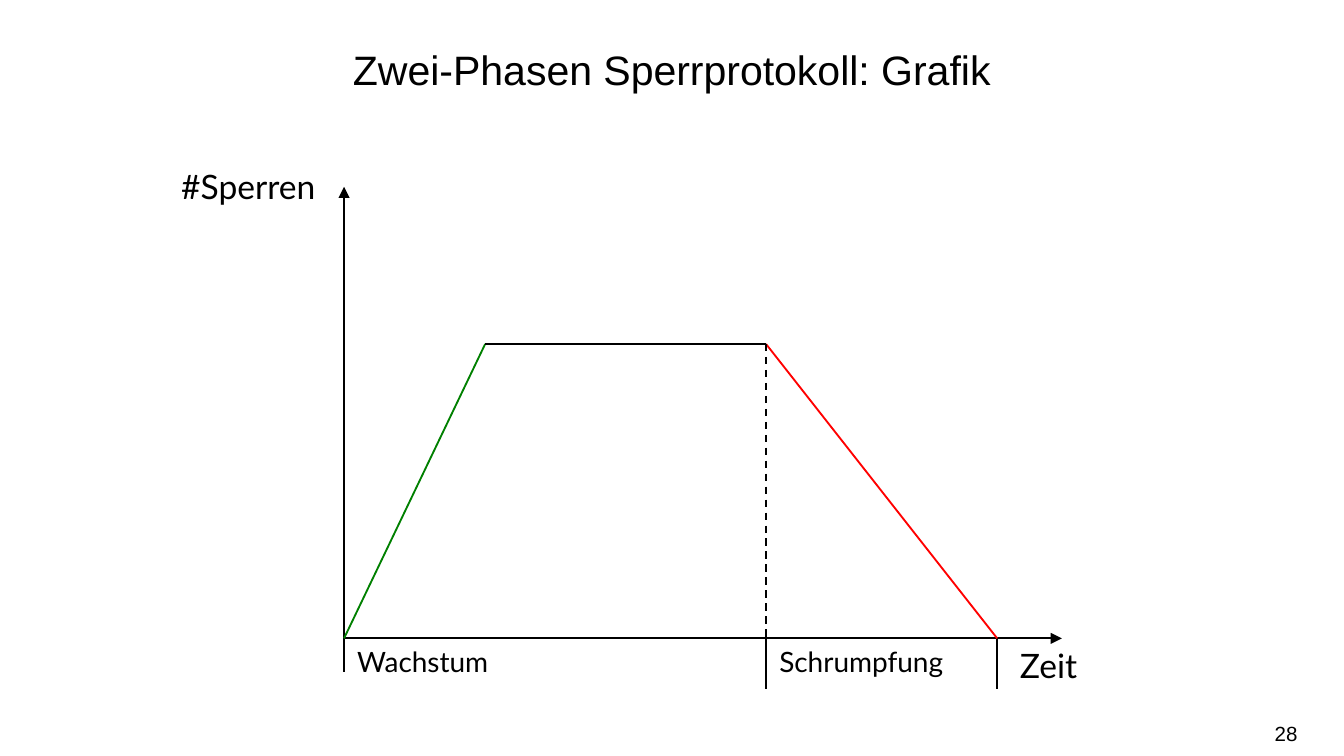
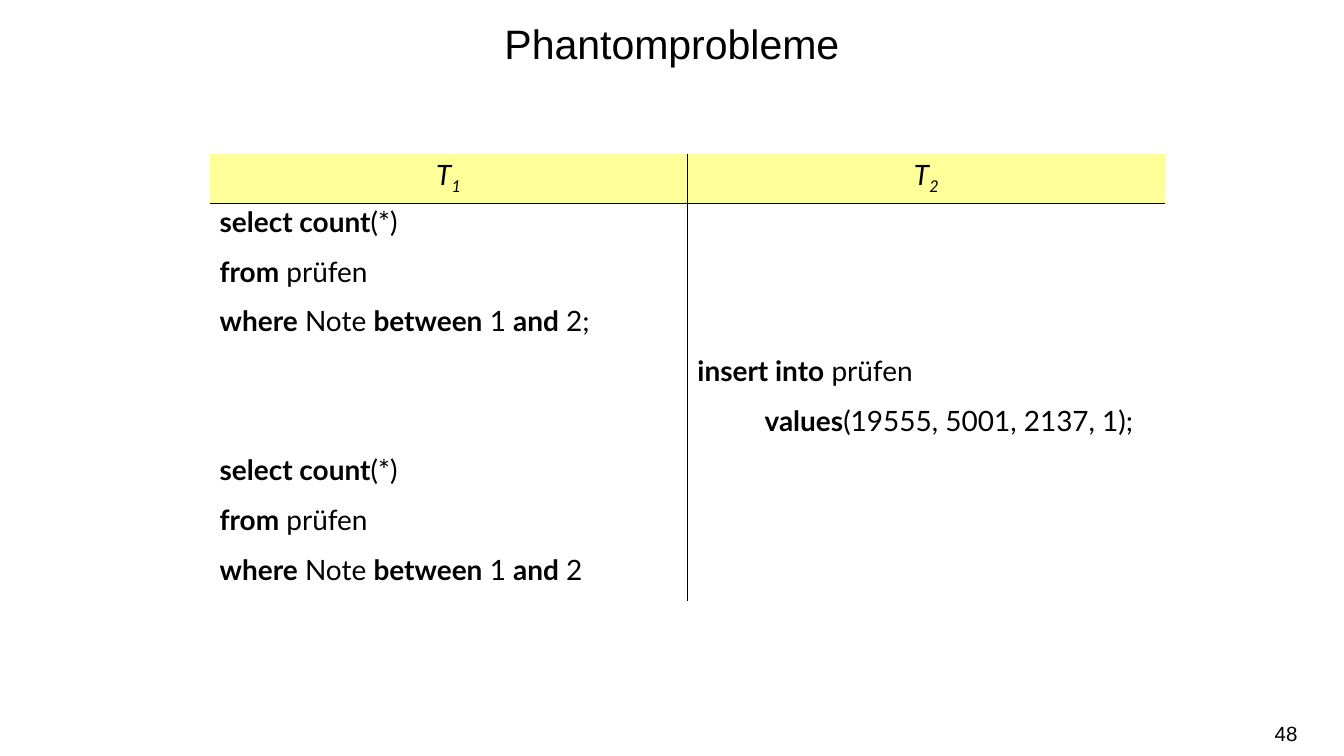
from dataclasses import dataclass

from lxml.etree import SubElement
from pptx import Presentation
from pptx.dml.color import RGBColor
from pptx.enum.dml import MSO_LINE
from pptx.enum.shapes import MSO_CONNECTOR
from pptx.enum.text import MSO_ANCHOR, PP_ALIGN
from pptx.oxml.ns import qn
from pptx.util import Emu, Pt

WIDTH, HEIGHT = 2000, 1125  # 200 px to the inch


def px(n):
    return Emu(n * 4572)


@dataclass(frozen=True)
class Theme:
    black: str = "000000"
    green: str = "008000"
    red: str = "FF0000"
    header: str = "FFFF99"
    head_font: str = "Arial"
    body_font: str = "Lato"
    title: int = 22
    axis: int = 18
    body: int = 15
    number: int = 11
    line: int = 1
    border: float = 0.75


class Deck:
    def __init__(self, theme):
        self.t = theme
        self.prs = Presentation()
        self.prs.slide_width, self.prs.slide_height = px(WIDTH), px(HEIGHT)
        self.s = None

    def slide(self, title, number, anchor):
        self.s = self.prs.slides.add_slide(self.prs.slide_layouts[6])
        t = self.t
        p = self.text(0, 0, WIDTH, 188, title, t.title, t.head_font,
                      PP_ALIGN.CENTER, anchor)
        p.line_spacing = 1.25
        self.text(1483, 1062, 448, 60, str(number), t.number, t.head_font,
                  PP_ALIGN.RIGHT, MSO_ANCHOR.MIDDLE, inset=0)

    def run(self, p, text, size, font, style=""):
        r = p.add_run()
        r.text = text
        f = r.font
        f.name, f.size = font, Pt(size)
        f.color.rgb = RGBColor.from_string(self.t.black)
        f.bold, f.italic = "b" in style, "i" in style
        if "_" in style:
            r._r.get_or_add_rPr().set("baseline", "-25000")

    def text(self, x, y, w, h, text, size, font, align=PP_ALIGN.LEFT,
             anchor=MSO_ANCHOR.TOP, inset=20):
        tf = self.s.shapes.add_textbox(px(x), px(y), px(w), px(h)).text_frame
        tf.word_wrap = True
        tf.vertical_anchor = anchor
        tf.margin_left = tf.margin_right = px(inset)
        tf.margin_top = tf.margin_bottom = px(10)
        p = tf.paragraphs[0]
        p.alignment = align
        self.run(p, text, size, font)
        return p

    def label(self, x, y, w, h, text, size):
        self.text(x, y, w, h, text, size, self.t.body_font)

    def line(self, start, end, color=None, arrow=False, dash=False):
        c = self.s.shapes.add_connector(MSO_CONNECTOR.STRAIGHT,
                                        *map(px, start + end))
        c.line.color.rgb = RGBColor.from_string(color or self.t.black)
        c.line.width = Pt(self.t.line)
        if dash:
            c.line.dash_style = MSO_LINE.DASH
        spPr = c._element.spPr
        if arrow:
            SubElement(spPr.find(qn("a:ln")), qn("a:tailEnd"), type="triangle")
        SubElement(spPr, qn("a:effectLst"))

    def borders(self, cell, drawn):
        tcPr = cell._tc.get_or_add_tcPr()
        for side in "LRTB":
            ln = SubElement(tcPr, qn(f"a:ln{side}"), w=str(Pt(self.t.border)))
            if side in drawn:
                fill = SubElement(ln, qn("a:solidFill"))
                SubElement(fill, qn("a:srgbClr"), val=self.t.black)
            else:
                SubElement(ln, qn("a:noFill"))

    def cell(self, cell, runs, header, indent):
        cell.margin_left = cell.margin_right = px(15)
        cell.margin_top = cell.margin_bottom = px(7)
        p = cell.text_frame.paragraphs[0]
        p.line_spacing = 0.9
        if header:
            p.alignment = PP_ALIGN.CENTER
        if indent:
            p.level = 1
            pPr = p._p.get_or_add_pPr()
            pPr.set("marL", str(px(indent)))
            pPr.set("indent", "0")
        if not runs:
            p.font.size = Pt(self.t.body)
        for text, style in runs:
            self.run(p, text, self.t.body, self.t.body_font, style)

    def table(self, x, y, col_w, row_h, rows, indents):
        """First row is the header; rules run below it and between columns."""
        n, m = len(rows), len(rows[0])
        tbl = self.s.shapes.add_table(n, m, px(x), px(y), px(col_w * m),
                                      px(row_h * n)).table
        tbl.first_row = tbl.horz_banding = False
        for col in tbl.columns:
            col.width = px(col_w)
        for i, row in enumerate(rows):
            tbl.rows[i].height = px(row_h)
            for j, runs in enumerate(row):
                cell = tbl.cell(i, j)
                self.cell(cell, runs, i == 0, indents.get((i, j), 0))
                drawn = ("L" if j else "") + ("R" if j < m - 1 else "")
                drawn += {0: "B", 1: "T"}.get(i, "")
                self.borders(cell, drawn)
                if i == 0:
                    cell.fill.solid()
                    cell.fill.fore_color.rgb = RGBColor.from_string(self.t.header)
                else:
                    cell.fill.background()


def lock_graph(d):
    t = d.t
    d.slide("Zwei-Phasen Sperrprotokoll: Grafik", 28, MSO_ANCHOR.MIDDLE)
    start, full, release, end = 512, 722, 1140, 1484
    base, top = 950, 512

    # Axes
    d.label(250, 237, 262, 80, "#Sperren", t.axis)
    d.line((start, 1000), (start, 278), arrow=True)
    d.label(1498, base, 164, 80, "Zeit", t.axis)
    d.line((start, base), (1580, base), arrow=True)
    for x in (release, end):
        d.line((x, base), (x, 1025))

    # Number of locks over time
    d.line((start, base), (full, top), t.green)
    d.line((release, top), (end, base), t.red)
    d.line((release, top), (full, top))
    d.line((release, top), (release, base), dash=True)

    # Phases
    for name, x0, x1 in (("Wachstum", start, release),
                         ("Schrumpfung", release, end)):
        d.label(x0, base, x1 - x0, 70, name, t.body)


def count_query(stop):
    return [
        [("select count", "b"), ("(*)", "")],
        [("from", "b"), (" prüfen", "")],
        [("where", "b"), (" Note ", ""), ("between", "b"), (" 1 ", ""),
         ("and", "b"), (" 2" + stop, "")],
    ]


def phantom_table(d):
    d.slide("Phantomprobleme", 48, MSO_ANCHOR.TOP)
    header = [[("T", "i"), (n, "i_")] for n in "12"]
    insert = [
        [("insert into", "b"), (" prüfen", "")],
        [("values", "b"), ("(19555, 5001, 2137, 1);", "")],
    ]
    rows = [header]
    rows += [[line, []] for line in count_query(";")]
    rows += [[[], line] for line in insert]
    rows += [[line, []] for line in count_query("")]
    d.table(312, 229, 711, 74, rows, indents={(5, 1): 100})


def main():
    d = Deck(Theme())
    lock_graph(d)
    phantom_table(d)
    d.prs.save("out.pptx")


if __name__ == "__main__":
    main()
